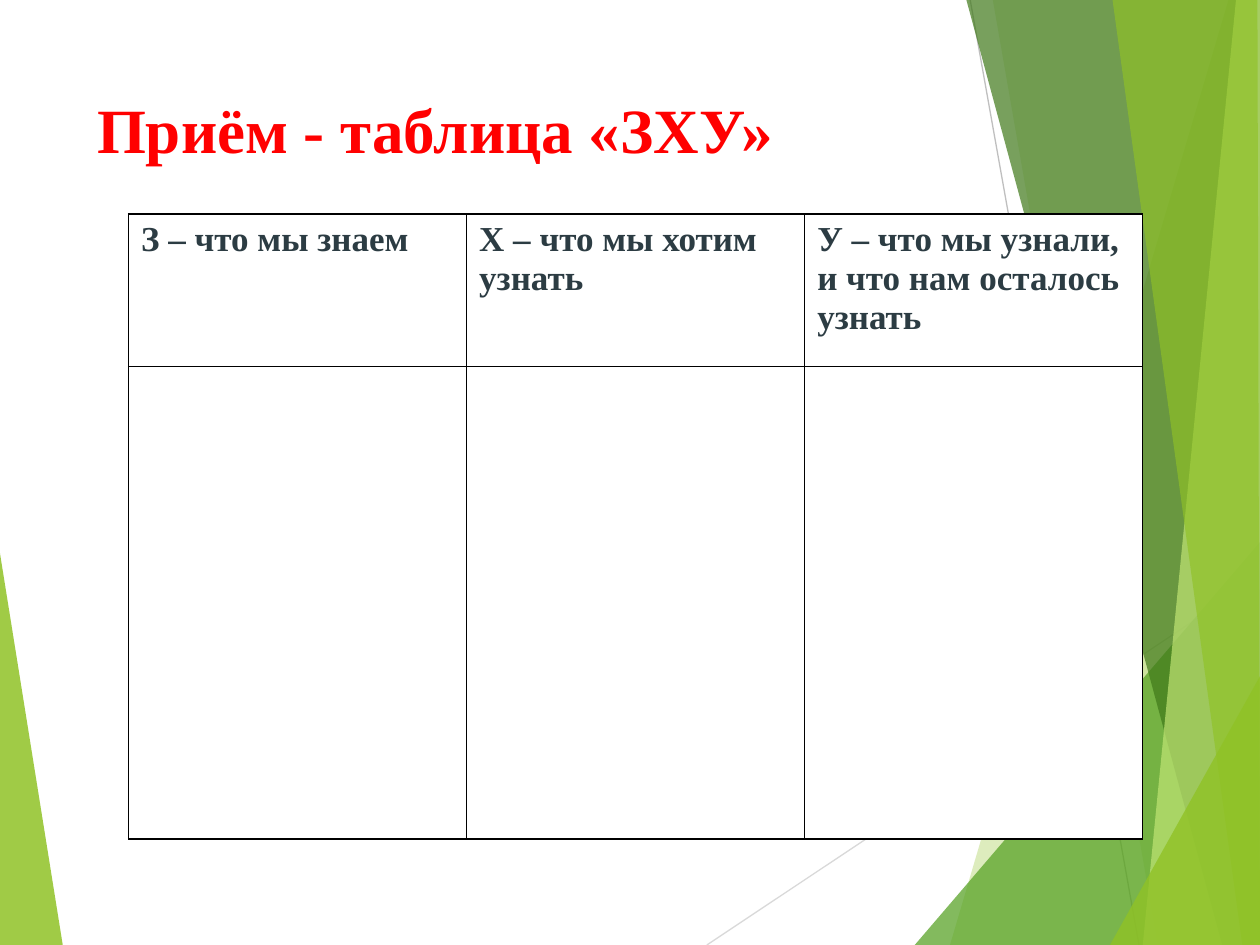
from lxml import etree
from pptx import Presentation
from pptx.dml.color import RGBColor
from pptx.enum import shapes, text
from pptx.oxml import ns
from pptx.util import Inches, Pt

COLORS = {
    "lime": "90C226", "pale": "C0E474", "green": "54A021", "dark": "3F7819",
    "line_light": "D9D9D9", "line_grey": "BFBFBF",
    "title": "FF0000", "ink": "2C3C43", "paper": "FFFFFF", "border": "000000",
}
FONT = "Times New Roman"
HEADINGS = ["З – что мы знаем", "Х – что мы хотим узнать",
            "У – что мы узнали, и что нам осталось узнать"]

LEFT_SHARD = ("lime", 85, [(0, 0), (0.5, 3.12), (0, 3.11)])
# Corner points are measured from the left top of the right-hand band.
RIGHT_SHARDS = [
    ("lime", 30, [(2.49, 0), (0.28, 7.5), (2.75, 7.5), (2.75, 0)]),
    ("lime", 20, [(0.62, 0), (1.93, 7.5), (2.75, 7.5), (2.75, 0)]),
    ("green", 72, [(0, 7.5), (2.75, 4.29), (2.75, 7.5)]),
    ("dark", 70, [(0.41, 0), (2.44, 7.5), (2.75, 7.5), (2.75, 0)]),
    ("pale", 70, [(2.55, 0), (1.81, 7.5), (2.75, 7.5), (2.74, 0)]),
    ("lime", 65, [(1.57, 0), (2.6, 7.5), (2.74, 7.5), (2.72, 0)]),
    ("lime", 80, [(1.55, 7.5), (2.75, 5.35), (2.75, 7.5)]),
]
RAYS = [("line_light", (-1.65, 7.5), (2.75, 4.57)),
        ("line_grey", (0.44, 0), (1.78, 7.5))]


def rgb(name):
    return RGBColor.from_string(COLORS[name])


def add_span(para, content, size, color, bold=True):
    span = para.add_run()
    span.text = content
    span.font.name, span.font.size, span.font.bold = FONT, Pt(size), bold
    span.font.color.rgb = rgb(color)


def add_shard(group, left, top, color, opacity, points):
    """Draw a translucent polygon with its points offset from left, top."""
    corners = [(Inches(left + x), Inches(top + y)) for x, y in points]
    builder = group.shapes.build_freeform(*corners[0])
    builder.add_line_segments(corners[1:], close=True)
    shard = builder.convert_to_shape()
    shard.shadow.inherit = False
    shard.fill.solid()
    shard.fill.fore_color.rgb = rgb(color)
    shard.line.fill.background()
    tint = shard.fill._xPr.find(".//" + ns.qn("a:srgbClr"))
    etree.SubElement(tint, ns.qn("a:alpha"), val=str(opacity * 1000))


def add_ray(group, left, top, color, start, end):
    ray = group.shapes.add_connector(
        shapes.MSO_CONNECTOR.STRAIGHT,
        Inches(left + start[0]), Inches(top + start[1]),
        Inches(left + end[0]), Inches(top + end[1]))
    ray.line.color.rgb = rgb(color)
    ray.line.width = Pt(0.75)
    etree.SubElement(ray._element.spPr, ns.qn("a:effectLst"))


def add_backdrop(page, left, top):
    """Draw the green shards, left edge first, then the right-hand band."""
    group = page.shapes.add_group_shape()
    add_shard(group, left, top + 4.39, *LEFT_SHARD)
    band_left = left + 7.26
    for ray in RAYS:
        add_ray(group, band_left, top, *ray)
    for shard in RIGHT_SHARDS:
        add_shard(group, band_left, top, *shard)


def place_title(page, left, top, width, height):
    title = page.shapes.title
    title.left, title.top = Inches(left), Inches(top)
    title.width, title.height = Inches(width), Inches(height)
    frame = title.text_frame
    frame.word_wrap = True
    frame.auto_size = text.MSO_AUTO_SIZE.NONE
    frame.vertical_anchor = text.MSO_ANCHOR.TOP
    para = frame.paragraphs[0]
    para.alignment = text.PP_ALIGN.LEFT
    add_span(para, "Приём - таблица «ЗХУ»", 36, "title")
    title._element.getparent().append(title._element)


def set_borders(cell):
    props = cell._tc.get_or_add_tcPr()
    for index, side in enumerate(("lnL", "lnR", "lnT", "lnB")):
        edge = etree.Element(ns.qn("a:" + side), w=str(Pt(1)))
        fill = etree.SubElement(edge, ns.qn("a:solidFill"))
        etree.SubElement(fill, ns.qn("a:srgbClr"), val=COLORS["border"])
        props.insert(index, edge)


def add_know_table(page, left, top, width, row_heights):
    table = page.shapes.add_table(
        len(row_heights), len(HEADINGS), Inches(left), Inches(top),
        Inches(width), Inches(sum(row_heights))).table
    for row, height in zip(table.rows, row_heights):
        row.height = Inches(height)
    for cell in table.iter_cells():
        cell.fill.solid()
        cell.fill.fore_color.rgb = rgb("paper")
        set_borders(cell)
    for column, heading in enumerate(HEADINGS):
        para = table.cell(0, column).text_frame.paragraphs[0]
        add_span(para, heading, 20, "ink")


def main():
    deck = Presentation()
    deck.slide_width, deck.slide_height = Inches(10), Inches(7.5)
    page = deck.slides.add_slide(deck.slide_layouts.get_by_name("Title Only"))
    add_backdrop(page, 0, 0)
    place_title(page, 0.67, 0.67, 6.94, 1.44)
    add_know_table(page, 1.02, 1.7, 8.05, [1.21, 3.75])
    deck.save("out.pptx")


if __name__ == "__main__":
    main()
